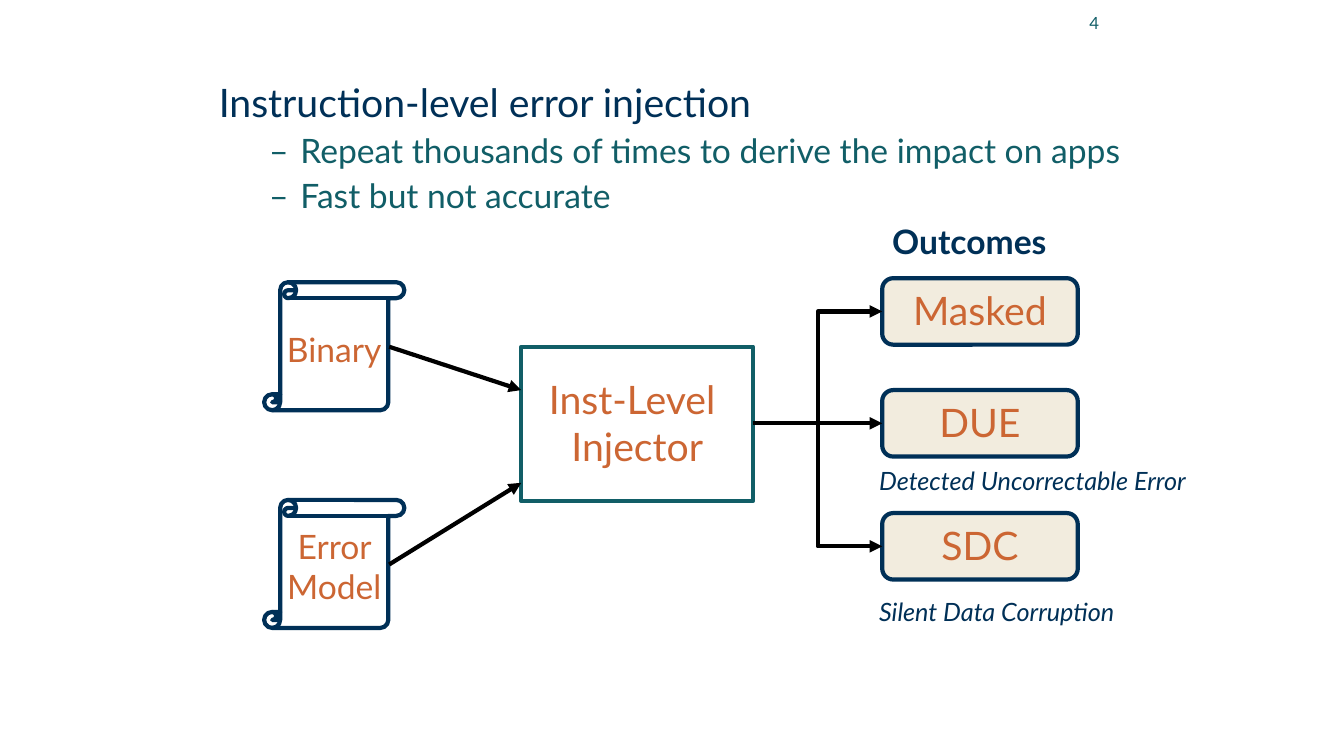
from lxml.etree import SubElement as Sub
from pptx import Presentation
from pptx.dml.color import RGBColor
from pptx.enum.shapes import MSO_CONNECTOR as Link, MSO_SHAPE as Kind
from pptx.enum.text import MSO_ANCHOR as Anchor, PP_ALIGN as Align
from pptx.oxml.ns import qn
from pptx.util import Inches, Pt

NAVY, TEAL, RUST, CREAM, BLACK = "003057", "115E67", "CC6633", "F2ECDE", "000000"


def color(code):
    """Turn a hex string into a colour."""
    return RGBColor.from_string(code)


def write(para, text, size, code, bold=False, slant=False):
    """Add one run of text to a paragraph."""
    run = para.add_run()
    run.text = text
    font = run.font
    font.name, font.size, font.bold, font.italic = "Lato", Pt(size), bold, slant
    font.color.rgb = color(code)


def pad(frame, side=0, edge=0):
    """Set the margins of a text frame and let it wrap."""
    frame.word_wrap = True
    frame.margin_left = frame.margin_right = Inches(side)
    frame.margin_top = frame.margin_bottom = Inches(edge)


def label(slide, box, text, size, code, align=Align.LEFT, anchor=Anchor.TOP, **style):
    """Place a line of text."""
    frame = slide.shapes.add_textbox(*map(Inches, box)).text_frame
    pad(frame, 0.1, 0.05)
    frame.vertical_anchor = anchor
    para = frame.paragraphs[0]
    para.alignment = align
    write(para, text, size, code, **style)


def dash(para):
    """Give a paragraph a hanging dash bullet."""
    props = para._p.get_or_add_pPr()
    props.set("marL", str(Inches(0.81)))
    props.set("indent", str(Inches(-0.31)))
    tint = Sub(Sub(props, qn("a:buClr")), qn("a:srgbClr"))
    tint.set("val", TEAL)
    Sub(props, qn("a:buFont")).set("typeface", "Lato")
    Sub(props, qn("a:buChar")).set("char", "–")


def intro(slide, head, points):
    """Place the heading and its bullet points."""
    box = map(Inches, (2.17, 0.83, 9.33, 6.58))
    frame = slide.shapes.add_textbox(*box).text_frame
    pad(frame)
    para = frame.paragraphs[0]
    para.line_spacing = 0.9
    write(para, head, 28, NAVY)
    for point in points:
        para = frame.add_paragraph()
        para.level = 1
        para.line_spacing = 0.9
        para.space_before = Pt(6)
        dash(para)
        write(para, point, 24, TEAL)


def block(slide, kind, box, lines, size, edge, fill=None):
    """Draw an outlined shape with centred text."""
    shape = slide.shapes.add_shape(kind, *map(Inches, box))
    shape.shadow.inherit = False
    if fill:
        shape.fill.solid()
        shape.fill.fore_color.rgb = color(fill)
    else:
        shape.fill.background()
    shape.line.color.rgb = color(edge)
    shape.line.width = Pt(3)
    frame = shape.text_frame
    pad(frame)
    frame.vertical_anchor = Anchor.MIDDLE
    for i, text in enumerate(lines):
        para = frame.add_paragraph() if i else frame.paragraphs[0]
        para.alignment = Align.CENTER
        para.line_spacing = 0.99
        write(para, text, size, RUST)


def arrow(slide, kind, start, end):
    """Draw a black arrow from start to end."""
    link = slide.shapes.add_connector(kind, *map(Inches, start + end))
    link.line.color.rgb = color(BLACK)
    link.line.width = Pt(3)
    Sub(link.line._get_or_add_ln(), qn("a:tailEnd")).set("type", "triangle")
    Sub(link._element.spPr, qn("a:effectLst"))


def main():
    """Build and save the slide."""
    deck = Presentation()
    deck.slide_width, deck.slide_height = Inches(13.33), Inches(7.5)
    slide = deck.slides.add_slide(deck.slide_layouts[6])

    intro(slide, "Instruction-level error injection", [
        "Repeat thousands of times to derive the impact on apps",
        "Fast but not accurate",
    ])
    label(slide, (9.78, -0.02, 1.22, 0.5), "4", 12, TEAL, Align.RIGHT, Anchor.MIDDLE)

    block(slide, Kind.RECTANGLE, (5.17, 3.44, 2.3, 1.53),
          ["Inst-Level ", "Injector"], 28, TEAL)
    for text, top, goal in (("Binary", 2.8, 3.87), ("Error Model", 4.96, 4.79)):
        block(slide, Kind.VERTICAL_SCROLL, (2.62, top, 1.39, 1.27), [text], 24, NAVY)
        arrow(slide, Link.STRAIGHT, (3.86, top + 0.64), (5.17, goal))

    for text, top in (("Masked", 2.76), ("DUE", 3.87), ("SDC", 5.09)):
        block(slide, Kind.ROUNDED_RECTANGLE, (8.75, top, 1.94, 0.66),
              [text], 28, NAVY, CREAM)
        arrow(slide, Link.ELBOW, (7.47, 4.2), (8.75, top + 0.33))

    label(slide, (8.75, 2.14, 3.88, 0.5), "Outcomes", 24, NAVY, bold=True)
    for text, top in (("Detected Uncorrectable Error", 4.57),
                      ("Silent Data Corruption", 5.87)):
        label(slide, (8.62, top, 3.88, 0.4), text, 18, NAVY, slant=True)

    deck.save("out.pptx")


if __name__ == "__main__":
    main()
